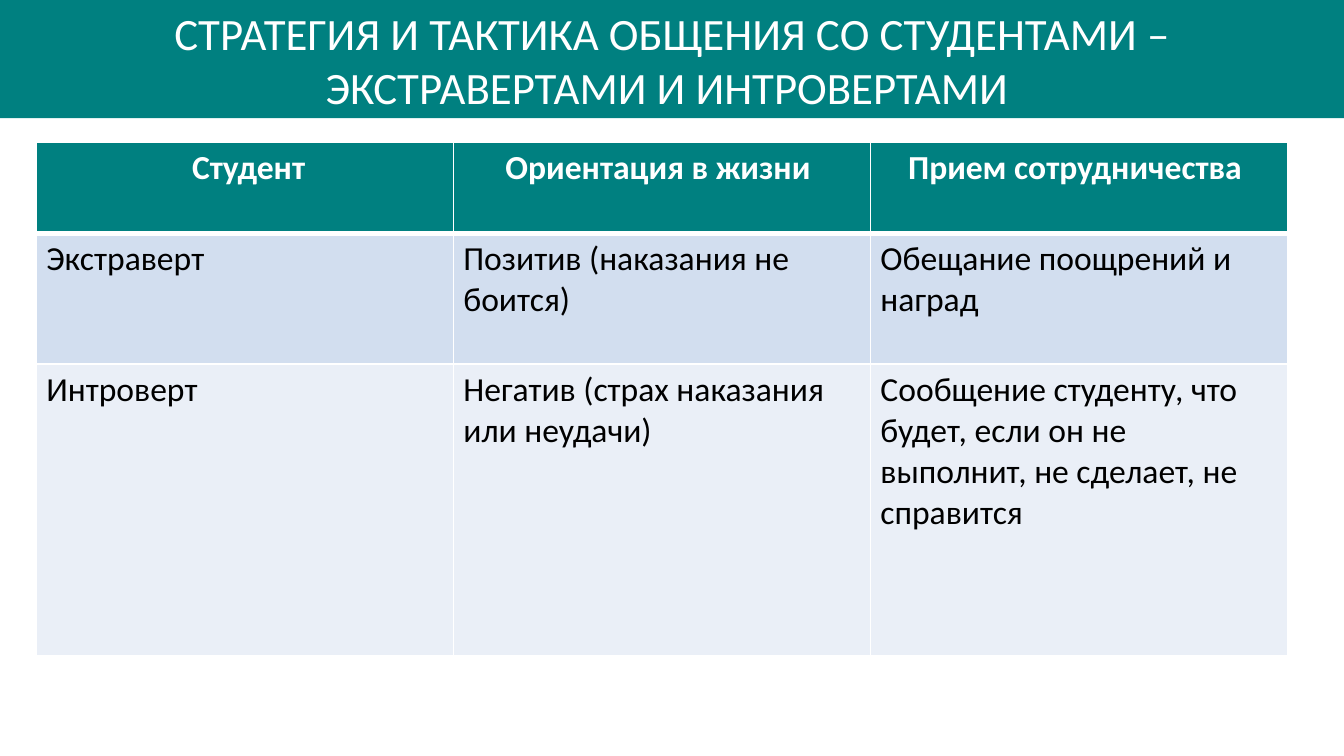
from lxml import etree
from pptx import Presentation
from pptx.dml.color import RGBColor
from pptx.enum import text
from pptx.oxml.ns import qn
from pptx.util import Inches, Pt

COLORS = {"teal": "008080", "blue": "D2DEEF", "pale": "EAEFF7",
          "white": "FFFFFF", "black": "000000"}
TITLE = "СТРАТЕГИЯ И ТАКТИКА ОБЩЕНИЯ СО СТУДЕНТАМИ – ЭКСТРАВЕРТАМИ И ИНТРОВЕРТАМИ "
ROWS = [
    (0.68, "teal", (" Студент", "Ориентация в жизни ", "Прием сотрудничества ")),
    (0.97, "blue", ("Экстраверт", "Позитив (наказания не боится)",
                    "Обещание поощрений и наград")),
    (2.17, "pale", ("Интроверт", "Негатив (страх наказания или неудачи)",
                    "Сообщение студенту, что будет, если он не выполнит, "
                    "не сделает, не справится")),
]
WIDTH = Inches(9.31)


def paint(item, color):
    item.fill.solid()
    item.fill.fore_color.rgb = RGBColor.from_string(COLORS[color])


def write(frame, words, size, color, bold, align):
    frame.text = words
    line = frame.paragraphs[0]
    line.alignment = align
    font = line.runs[0].font
    font.name, font.size, font.bold = "Calibri", Pt(size), bold
    font.color.rgb = RGBColor.from_string(COLORS[color])


def inset(item):
    item.margin_left = item.margin_right = Pt(5.4)
    item.margin_top = item.margin_bottom = Pt(2.7)


def edge(cell, sides):
    props = cell._tc.get_or_add_tcPr()
    for spot, (side, width) in enumerate(sides.items()):
        line = etree.Element(qn("a:" + side), w=str(Pt(width)))
        fill = etree.SubElement(line, qn("a:solidFill"))
        etree.SubElement(fill, qn("a:srgbClr"), val=COLORS["white"])
        props.insert(spot, line)


deck = Presentation()
deck.slide_width = Inches(10)
deck.slide_height = deck.slide_width * 9 // 16
slide = deck.slides.add_slide(deck.slide_layouts[5])

title = slide.shapes.title
title.left, title.top = 0, 0
title.width, title.height = deck.slide_width, Inches(0.88)
paint(title, "teal")
frame = title.text_frame
frame.word_wrap = True
frame.auto_size = text.MSO_AUTO_SIZE.NONE
frame.vertical_anchor = text.MSO_ANCHOR.BOTTOM
inset(frame)
write(frame, TITLE, 24, "white", False, text.PP_ALIGN.CENTER)

count = len(ROWS[0][2])
table = slide.shapes.add_table(
    len(ROWS), count, Inches(0.27), Inches(1.06), WIDTH,
    Inches(sum(row[0] for row in ROWS))).table
for column in table.columns:
    column.width = WIDTH // count
for r, (height, fill, words) in enumerate(ROWS):
    table.rows[r].height = Inches(height)
    head = r == 0
    color = "white" if head else "black"
    align = text.PP_ALIGN.CENTER if head else text.PP_ALIGN.LEFT
    for c, word in enumerate(words):
        cell = table.cell(r, c)
        paint(cell, fill)
        inset(cell)
        write(cell.text_frame, word, 18, color, head, align)
        if head:
            edge(cell, {"lnL": 1, "lnR": 1, "lnT": 1, "lnB": 3})

deck.save("out.pptx")
